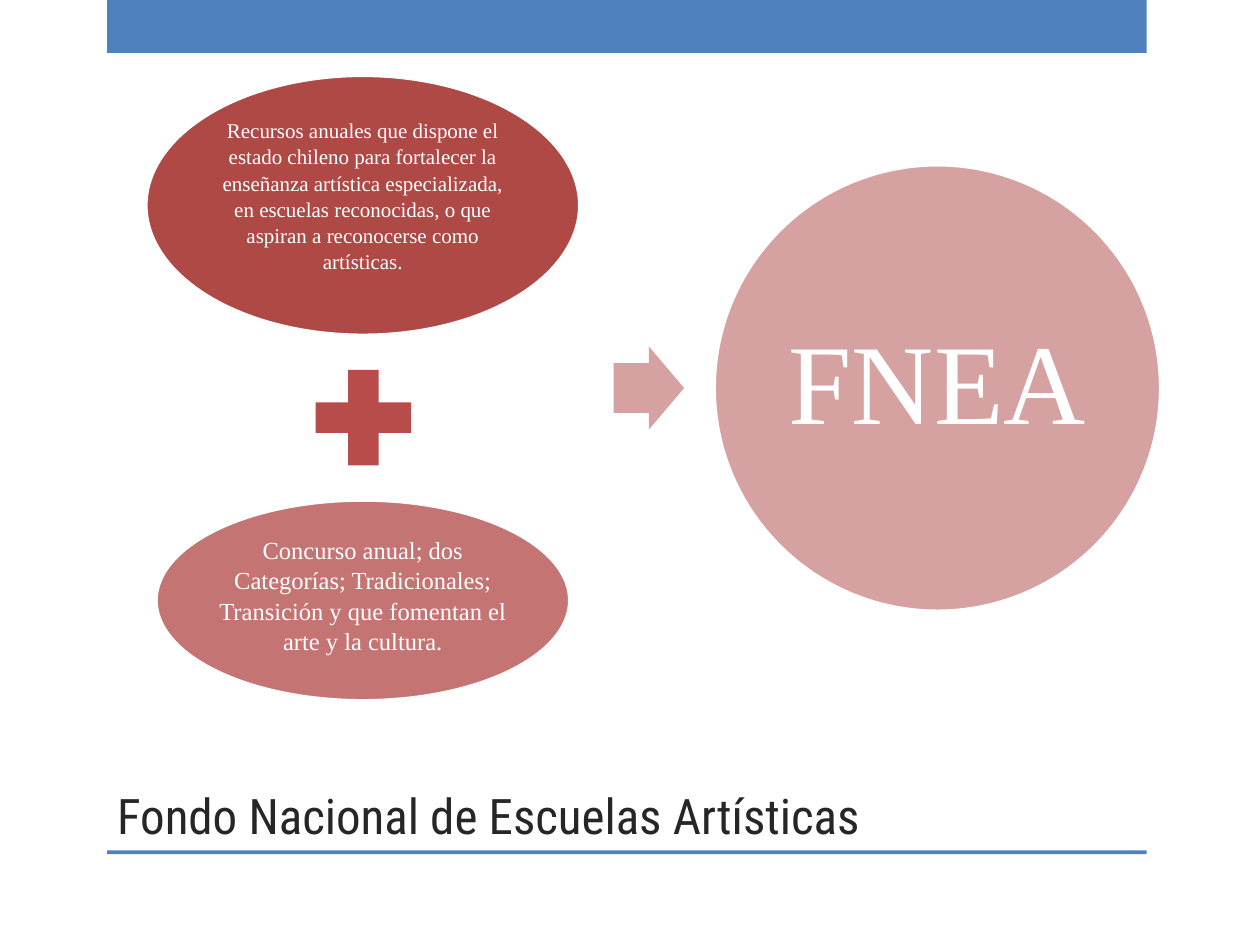
from pptx import Presentation
from pptx.dml.color import RGBColor
from pptx.enum.shapes import MSO_SHAPE
from pptx.enum.text import MSO_ANCHOR, PP_ALIGN
from pptx.util import Inches, Pt

BLUE = RGBColor(0x4F, 0x81, 0xBD)
WHITE = RGBColor(0xFF, 0xFF, 0xFF)
INK = RGBColor(0x26, 0x26, 0x26)
DARK_RED = RGBColor(0xAE, 0x49, 0x46)
RED = RGBColor(0xB7, 0x4C, 0x4A)
ROSE = RGBColor(0xC4, 0x74, 0x72)
ARROW_PINK = RGBColor(0xD6, 0xA1, 0xA1)
PINK = RGBColor(0xD6, 0xA2, 0xA1)

TITLE = "Fondo Nacional de Escuelas Artísticas"
BARS = [(0.85, 0, 8.25, 0.42), (0.85, 6.75, 8.25, 0.03)]
OVALS = [
    dict(text="Recursos anuales que dispone el estado chileno para fortalecer la "
              "enseñanza artística especializada, en escuelas reconocidas, o que "
              "aspiran a reconocerse como artísticas.",
         place=(1.16, 0.6, 3.44, 2.06), color=DARK_RED, size=12,
         inset=0.02, bottom=0.18, spacing=1.04, wrap=True),
    dict(text="Concurso anual; dos Categorías; Tradicionales; Transición y que "
              "fomentan el arte y la cultura.",
         place=(1.24, 3.97, 3.28, 1.59), color=ROSE, size=14,
         inset=0.02, bottom=0.11, spacing=1.04, wrap=True),
    dict(text="FNEA", place=(5.67, 1.31, 3.54, 3.54), color=PINK, size=65,
         inset=0.09, bottom=0.09, spacing=0.9, wrap=False),
]
PLUS = (2.37, 2.8, 1.03, 1.03)
ARROW = (4.87, 2.75, 0.56, 0.66)


def add_figure(page, kind, place, color):
    figure = page.shapes.add_shape(kind, *map(Inches, place))
    figure.shadow.inherit = False
    figure.fill.solid()
    figure.fill.fore_color.rgb = color
    figure.line.fill.background()
    return figure


def add_words(para, text, font, size, color):
    span = para.add_run()
    span.text = text
    span.font.name = font
    span.font.size = Pt(size)
    span.font.color.rgb = color


def add_oval(page, oval):
    figure = add_figure(page, MSO_SHAPE.OVAL, oval["place"], oval["color"])
    figure.line.color.rgb = WHITE
    figure.line.width = Pt(1.75)
    frame = figure.text_frame
    frame.word_wrap = oval["wrap"]
    frame.vertical_anchor = MSO_ANCHOR.MIDDLE
    frame.margin_left = frame.margin_right = frame.margin_top = Inches(oval["inset"])
    frame.margin_bottom = Inches(oval["bottom"])
    para = frame.paragraphs[0]
    para.alignment = PP_ALIGN.CENTER
    para.line_spacing = oval["spacing"]
    add_words(para, oval["text"], "Times New Roman", oval["size"], WHITE)


def add_title(page):
    title = page.shapes.title
    title.left, title.top, title.width, title.height = map(Inches, (0.83, 5, 7.42, 1.75))
    title.text_frame.vertical_anchor = MSO_ANCHOR.BOTTOM
    para = title.text_frame.paragraphs[0]
    para.alignment = PP_ALIGN.LEFT
    add_words(para, TITLE, "Roboto Condensed", 28, INK)


def main():
    deck = Presentation()
    deck.slide_width, deck.slide_height = Inches(10), Inches(7.5)
    page = deck.slides.add_slide(deck.slide_layouts[5])
    add_title(page)
    for place in BARS:
        add_figure(page, MSO_SHAPE.RECTANGLE, place, BLUE)
    for oval in OVALS:
        add_oval(page, oval)
    add_figure(page, MSO_SHAPE.MATH_PLUS, PLUS, RED)
    arrow = add_figure(page, MSO_SHAPE.RIGHT_ARROW, ARROW, ARROW_PINK)
    arrow.adjustments[0] = 0.6
    arrow.adjustments[1] = 0.5
    deck.save("out.pptx")


if __name__ == "__main__":
    main()
